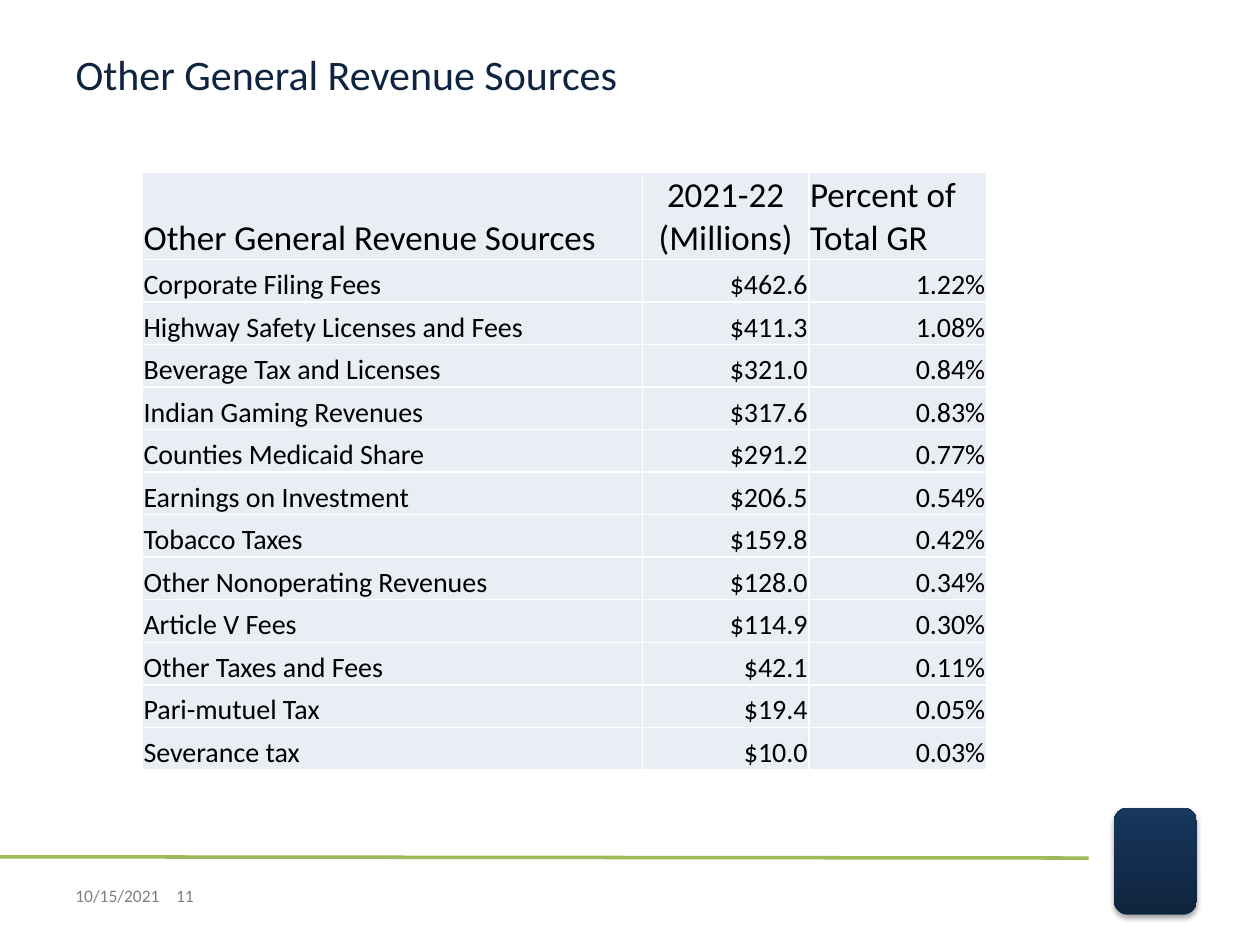
from lxml import etree
from pptx import Presentation
from pptx.dml.color import RGBColor
from pptx.enum.shapes import MSO_CONNECTOR, MSO_SHAPE
from pptx.enum.text import MSO_ANCHOR as ANCHOR, PP_ALIGN as ALIGN
from pptx.oxml import parse_xml
from pptx.oxml.ns import nsdecls, qn
from pptx.util import Inches, Pt


def color(value):
    return RGBColor.from_string(value)


def style(para, size, value):
    for span in para.runs:
        span.font.name = "Calibri"
        span.font.size = Pt(size)
        span.font.color.rgb = color(value)


rows = [
    ("Other General Revenue Sources", "2021-22 (Millions)", "Percent of Total GR"),
    ("Corporate Filing Fees", "$462.6", "1.22%"),
    ("Highway Safety Licenses and Fees", "$411.3", "1.08%"),
    ("Beverage Tax and Licenses", "$321.0", "0.84%"),
    ("Indian Gaming Revenues", "$317.6", "0.83%"),
    ("Counties Medicaid Share", "$291.2", "0.77%"),
    ("Earnings on Investment", "$206.5", "0.54%"),
    ("Tobacco Taxes", "$159.8", "0.42%"),
    ("Other Nonoperating Revenues", "$128.0", "0.34%"),
    ("Article V Fees", "$114.9", "0.30%"),
    ("Other Taxes and Fees", "$42.1", "0.11%"),
    ("Pari-mutuel Tax", "$19.4", "0.05%"),
    ("Severance tax", "$10.0", "0.03%"),
]

deck = Presentation()
deck.slide_width, deck.slide_height = Inches(10), Inches(7.5)
page = deck.slides.add_slide(deck.slide_layouts[5])

badge = page.shapes.add_shape(
    MSO_SHAPE.ROUNDED_RECTANGLE, Inches(8.84), Inches(6.41), Inches(0.66), Inches(0.85))
badge.fill.gradient()
badge.fill.gradient_angle = 90
for stop, value in zip(badge.fill.gradient_stops, ("0F243E", "17375E")):
    stop.color.rgb = color(value)
badge.line.fill.background()
badge.shadow.inherit = False
badge._element.spPr.find(qn("a:effectLst")).append(parse_xml(
    f'<a:outerShdw {nsdecls("a")} blurRad="{Pt(3.1)}" dist="{Pt(1.8)}" dir="5400000" '
    'rotWithShape="0"><a:srgbClr val="000000"><a:alpha val="35000"/></a:srgbClr></a:outerShdw>'))

rule = page.shapes.add_connector(
    MSO_CONNECTOR.STRAIGHT, Inches(0), Inches(6.8), Inches(8.64), Inches(6.81))
rule.line.color.rgb = color("9BBB59")
rule.line.width = Pt(2)
etree.SubElement(rule._element.spPr, qn("a:effectLst"))

title = page.shapes.title
title.left, title.top, title.width, title.height = (
    Inches(0.5), Inches(0.3), Inches(8.12), Inches(0.57))
title.text_frame.text = "Other General Revenue Sources"
title.text_frame.vertical_anchor = ANCHOR.MIDDLE
title.text_frame.paragraphs[0].alignment = ALIGN.LEFT
style(title.text_frame.paragraphs[0], 24, "0F243E")

table = page.shapes.add_table(
    len(rows), 3, Inches(1.13), Inches(1.37), Inches(6.7), Inches(4.72)).table
table.first_row = table.horz_banding = False
for column, width in zip(table.columns, (3.97, 1.32, 1.41)):
    column.width = Inches(width)

for r, values in enumerate(rows):
    header = r == 0
    table.rows[r].height = Inches(0.67 if header else 0.3375)
    aligns = (ALIGN.LEFT, ALIGN.CENTER, ALIGN.LEFT) if header else (
        ALIGN.LEFT, ALIGN.RIGHT, ALIGN.RIGHT)
    for c, (value, align) in enumerate(zip(values, aligns)):
        cell = table.cell(r, c)
        cell.text_frame.text = value
        cell.vertical_anchor = ANCHOR.BOTTOM
        cell.margin_left = cell.margin_right = cell.margin_top = Inches(0.01)
        cell.margin_bottom = 0
        para = cell.text_frame.paragraphs[0]
        para.alignment = align
        style(para, 20 if header else 16, "000000")
        for side in ("lnL", "lnR", "lnT", "lnB"):
            cell._tc.get_or_add_tcPr().append(parse_xml(
                f'<a:{side} {nsdecls("a")} w="{Pt(1)}"><a:solidFill>'
                f'<a:srgbClr val="FFFFFF"/></a:solidFill></a:{side}>'))
        cell.fill.solid()
        cell.fill.fore_color.rgb = color("E9EDF4")

footer = page.shapes.add_textbox(Inches(0.5), Inches(6.95), Inches(2.33), Inches(0.32))
footer.text_frame.word_wrap = True
footer.text_frame.vertical_anchor = ANCHOR.MIDDLE
para = footer.text_frame.paragraphs[0]
para.text = "10/15/2021\t11"
tabs = etree.SubElement(para._p.get_or_add_pPr(), qn("a:tabLst"))
etree.SubElement(tabs, qn("a:tab"), pos=str(Inches(0.8)), algn="l")
style(para, 10, "808080")

deck.save("out.pptx")
